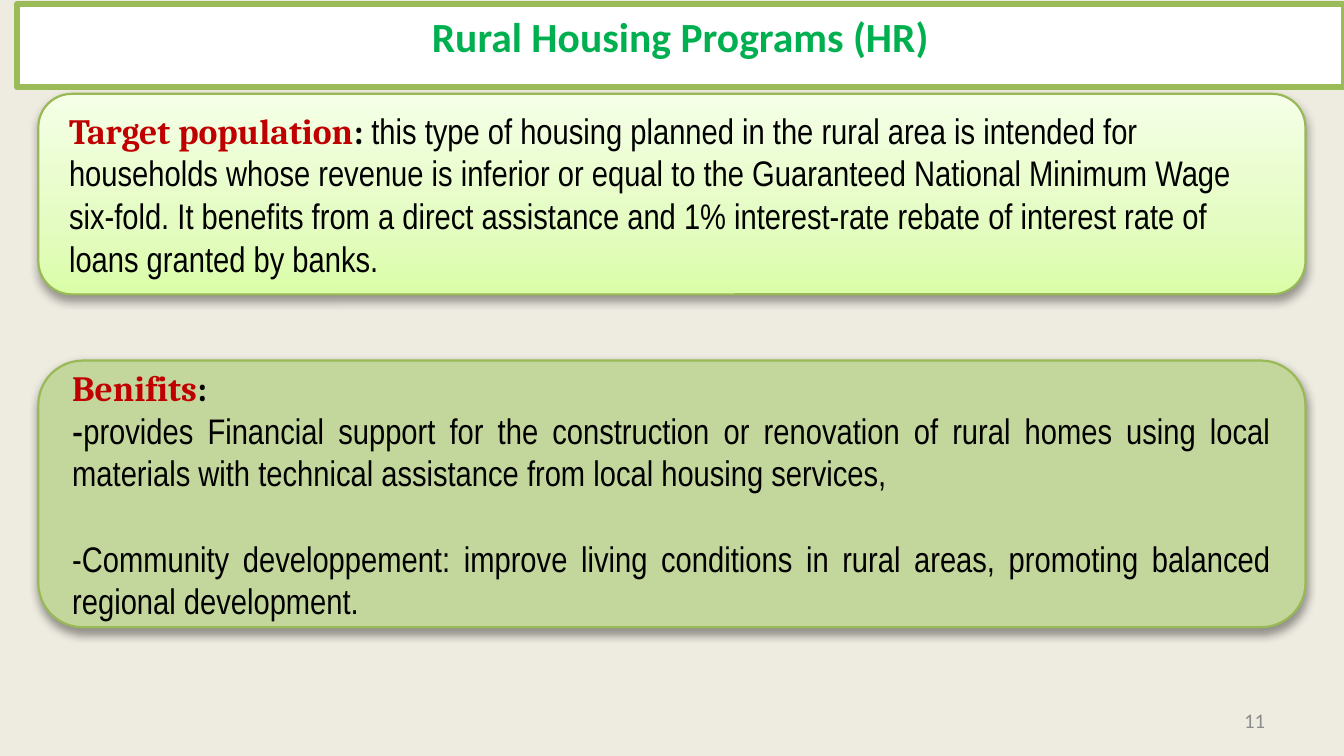
from dataclasses import dataclass

from lxml import etree
from pptx import Presentation
from pptx import util as u
from pptx.dml.color import RGBColor
from pptx.enum import shapes, text
from pptx.oxml.ns import qn

SLIDE_WIDTH = 6.3
SLIDE_HEIGHT = SLIDE_WIDTH * 9 / 16

COLORS = {
    "background": "EEECE1", "white": "FFFFFF", "black": "000000",
    "title": "00B050", "title_line": "9BBB59", "heading": "C00000",
    "card_line": "98B955", "card": "C3D69B", "number": "8C8C8C",
}
PALE_GREEN_STOPS = ((0, "DAFDA7"), (35, "E4FCC2"), (100, "F5FFE7"))


@dataclass(frozen=True)
class Span:
    words: str
    font: str = "Arial Narrow"
    color: str = "black"
    bold: bool = False


@dataclass(frozen=True)
class Card:
    top: float
    height: float
    align: text.PP_ALIGN
    paragraphs: tuple[tuple[Span, ...], ...]
    gradient: bool = False


def heading(words: str) -> tuple[Span, Span]:
    return (Span(words, "Cambria", "heading", True),
            Span(": ", "Cambria", bold=True))


CARDS = (
    Card(0.44, 0.94, text.PP_ALIGN.LEFT, (
        (*heading("Target population"),
         Span("this type of housing planned in the rural area is intended for "
              "households whose revenue is inferior or equal to the Guaranteed "
              "National Minimum Wage six-fold. It benefits from a direct assistance "
              "and 1% interest-rate rebate of interest rate of loans granted by "
              "banks.")),
    ), gradient=True),
    Card(1.69, 1.25, text.PP_ALIGN.JUSTIFY, (
        heading("Benifits"),
        (Span("-", "Cambria", bold=True),
         Span("provides Financial support for the construction or renovation of "
              "rural homes using local materials with technical assistance from "
              "local housing services,")),
        (Span("-Community developpement: improve living conditions in rural areas, "
              "promoting balanced regional development. "),),
    )),
)


def rgb(name: str) -> RGBColor:
    return RGBColor.from_string(COLORS[name])


def style_font(font, name: str, size: float, color: str, bold: bool = False) -> None:
    font.name, font.size, font.bold = name, u.Pt(size), bold
    font.color.rgb = rgb(color)


def place(shape, left: float, top: float, width: float, height: float) -> None:
    shape.left, shape.top = u.Inches(left), u.Inches(top)
    shape.width, shape.height = u.Inches(width), u.Inches(height)


def set_compact_frame(frame, anchor: text.MSO_ANCHOR) -> None:
    frame.margin_left = frame.margin_right = u.Inches(0.06)
    frame.margin_top = frame.margin_bottom = u.Inches(0.03)
    frame.vertical_anchor = anchor
    frame.auto_size = text.MSO_AUTO_SIZE.NONE
    frame.word_wrap = True


def paint_gradient(shape) -> None:
    """Fill with pale green, lightest at the top."""
    shape.fill.gradient()
    shape.fill.gradient_angle = 90
    stops = shape._element.spPr.find(qn("a:gradFill")).find(qn("a:gsLst"))
    for stop in list(stops):
        stops.remove(stop)
    for percent, color in PALE_GREEN_STOPS:
        stop = etree.SubElement(stops, qn("a:gs"), pos=str(percent * 1000))
        etree.SubElement(stop, qn("a:srgbClr"), val=color)


def add_soft_shadow(shape) -> None:
    shape.shadow.inherit = False
    effects = shape._element.spPr.find(qn("a:effectLst"))
    shadow = etree.SubElement(
        effects, qn("a:outerShdw"), blurRad=str(u.Pt(3.1)), dist=str(u.Pt(1.6)),
        dir=str(90 * 60000), rotWithShape="0")
    color = etree.SubElement(shadow, qn("a:srgbClr"), val=COLORS["black"])
    etree.SubElement(color, qn("a:alpha"), val="38000")


def add_title(page) -> None:
    title = page.shapes.title
    place(title, 0.08, 0.02, 6.22, 0.39)
    title.fill.solid()
    title.fill.fore_color.rgb = rgb("white")
    title.line.color.rgb = rgb("title_line")
    title.line.width = u.Pt(2)
    set_compact_frame(title.text_frame, text.MSO_ANCHOR.TOP)
    title.text_frame.text = "Rural Housing Programs (HR)"
    para = title.text_frame.paragraphs[0]
    para.alignment = text.PP_ALIGN.CENTER
    style_font(para.runs[0].font, "Calibri", 14, "title", True)


def add_card(page, card: Card) -> None:
    box = page.shapes.add_shape(
        shapes.MSO_SHAPE.ROUNDED_RECTANGLE, u.Inches(0.18), u.Inches(card.top),
        u.Inches(5.94), u.Inches(card.height))
    if card.gradient:
        paint_gradient(box)
    else:
        box.fill.solid()
        box.fill.fore_color.rgb = rgb("card")
    box.line.color.rgb = rgb("card_line")
    box.line.width = u.Pt(0.75)
    add_soft_shadow(box)

    frame = box.text_frame
    frame.word_wrap = True
    frame.vertical_anchor = text.MSO_ANCHOR.MIDDLE
    for index, spans in enumerate(card.paragraphs):
        para = frame.add_paragraph() if index else frame.paragraphs[0]
        para.alignment = card.align
        if index > 1:
            para.space_before = u.Pt(14.4)
        for span in spans:
            run = para.add_run()
            run.text = span.words
            style_font(run.font, span.font, 12, span.color, span.bold)


def add_page_number(page) -> None:
    box = page.shapes.add_textbox(
        u.Inches(4.52), u.Inches(3.28), u.Inches(1.47), u.Inches(0.19))
    set_compact_frame(box.text_frame, text.MSO_ANCHOR.MIDDLE)
    box.text_frame.text = "11"
    para = box.text_frame.paragraphs[0]
    para.alignment = text.PP_ALIGN.RIGHT
    style_font(para.runs[0].font, "Calibri", 7, "number")


def main() -> None:
    deck = Presentation()
    deck.slide_width = u.Inches(SLIDE_WIDTH)
    deck.slide_height = u.Inches(SLIDE_HEIGHT)
    page = deck.slides.add_slide(deck.slide_layouts[5])
    page.background.fill.solid()
    page.background.fill.fore_color.rgb = rgb("background")
    add_title(page)
    for card in CARDS:
        add_card(page, card)
    add_page_number(page)
    deck.save("out.pptx")


if __name__ == "__main__":
    main()
